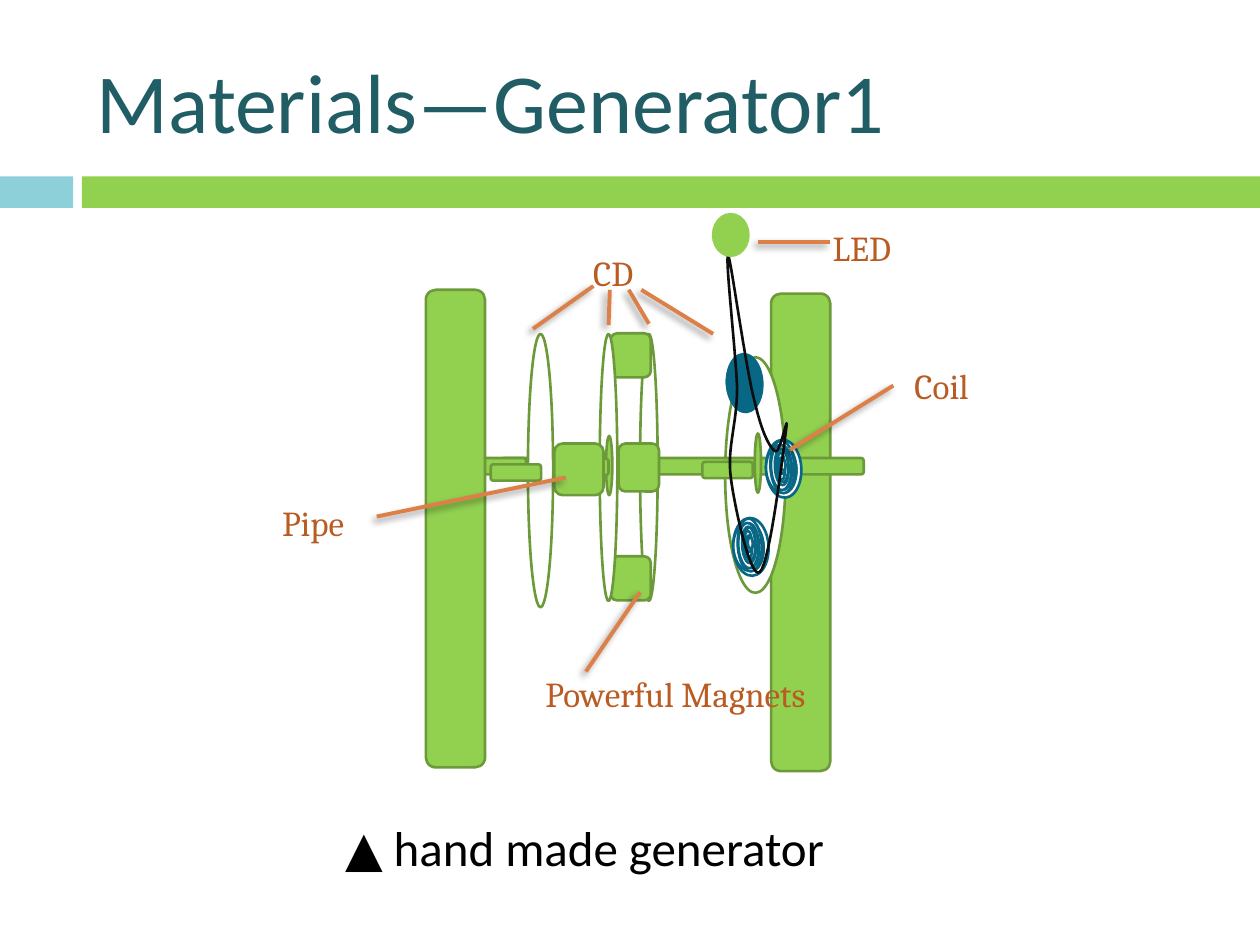
import dataclasses

import lxml.etree
import pptx
import pptx.dml.color
import pptx.enum.shapes
import pptx.enum.text
import pptx.oxml.ns
import pptx.util

Inches = pptx.util.Inches
Pt = pptx.util.Pt
Shapes = pptx.enum.shapes.MSO_SHAPE
Anchor = pptx.enum.text.MSO_ANCHOR


@dataclasses.dataclass(frozen=True)
class Theme:
    green: str = "92D050"
    dark_green: str = "6C9A3B"
    sky: str = "8DD0D9"
    teal: str = "215D65"
    coil: str = "076785"
    wire: str = "0D0D0D"
    pointer: str = "DD8047"
    label: str = "B95B22"
    black: str = "000000"
    white: str = "FFFFFF"
    body_font: str = "Calibri"
    label_font: str = "Cambria"
    title_size: int = 48
    caption_size: int = 28
    label_size: int = 20
    outline: float = 1.5
    pointer_width: float = 2.25


def rgb(value):
    return pptx.dml.color.RGBColor.from_string(value)


class SlideBuilder:
    def __init__(self, slide, theme):
        self.slide = slide
        self.theme = theme

    def shape(self, kind, box, fill, line=None, rotation=0):
        shape = self.slide.shapes.add_shape(kind, *map(Inches, box))
        shape.shadow.inherit = False
        shape.rotation = rotation
        shape.fill.solid()
        shape.fill.fore_color.rgb = rgb(fill)
        if line:
            shape.line.color.rgb = rgb(line)
            shape.line.width = Pt(self.theme.outline)
        else:
            shape.line.fill.background()

    def text(self, box, words, font, size, color, anchor=Anchor.TOP):
        frame = self.slide.shapes.add_textbox(*map(Inches, box)).text_frame
        frame.word_wrap = True
        frame.vertical_anchor = anchor
        paragraph = frame.paragraphs[0]
        paragraph.text = words
        paragraph.font.name = font
        paragraph.font.size = Pt(size)
        paragraph.font.color.rgb = rgb(color)

    def label(self, box, words):
        theme = self.theme
        self.text(box, words, theme.label_font, theme.label_size, theme.label)

    def pointer(self, start, end):
        connector = self.slide.shapes.add_connector(
            pptx.enum.shapes.MSO_CONNECTOR.STRAIGHT, *map(Inches, start + end))
        connector.line.color.rgb = rgb(self.theme.pointer)
        connector.line.width = Pt(self.theme.pointer_width)
        qn = pptx.oxml.ns.qn
        properties = connector.element.find(qn("p:spPr"))
        effects = lxml.etree.SubElement(properties, qn("a:effectLst"))
        shadow = lxml.etree.SubElement(
            effects, qn("a:outerShdw"), blurRad=str(Pt(4)), dist=str(Pt(3)),
            dir=str(135 * 60000), rotWithShape="0")
        color = lxml.etree.SubElement(shadow, qn("a:srgbClr"), val=self.theme.black)
        lxml.etree.SubElement(color, qn("a:alpha"), val="40000")

    def coil(self, left, top, fill):
        for across, down, width, height in COIL_RINGS:
            self.shape(Shapes.OVAL, (left + across, top + down, width, height),
                       fill, self.theme.coil, 267)

    def wire(self, start, curves, steps=16):
        points = []
        current = start
        for first, second, end in curves:
            for step in range(1, steps + 1):
                t = step / steps
                points.append(tuple(
                    (1 - t) ** 3 * a + 3 * (1 - t) ** 2 * t * b
                    + 3 * (1 - t) * t ** 2 * c + t ** 3 * d
                    for a, b, c, d in zip(current, first, second, end)))
            current = end
        builder = self.slide.shapes.build_freeform(
            Inches(start[0]), Inches(start[1]))
        builder.add_line_segments([(Inches(x), Inches(y)) for x, y in points])
        shape = builder.convert_to_shape()
        shape.shadow.inherit = False
        shape.fill.background()
        shape.line.color.rgb = rgb(self.theme.wire)
        shape.line.width = Pt(self.theme.outline)


COIL_RINGS = [
    (0, 0, 0.46, 0.28), (0.04, 0.04, 0.38, 0.2), (0.06, 0.05, 0.33, 0.16),
    (0.08, 0.09, 0.28, 0.11), (0.14, 0.1, 0.17, 0.1), (0.17, 0.11, 0.11, 0.07),
    (0.02, 0.02, 0.38, 0.24), (0.06, 0.05, 0.32, 0.17), (0.08, 0.06, 0.27, 0.14),
    (0.1, 0.09, 0.24, 0.09), (0.15, 0.09, 0.14, 0.08), (0.18, 0.09, 0.09, 0.06),
    (0.01, 0.03, 0.42, 0.19), (0.05, 0.06, 0.35, 0.14), (0.07, 0.07, 0.3, 0.11),
    (0.08, 0.09, 0.26, 0.07), (0.14, 0.1, 0.15, 0.06), (0.17, 0.11, 0.1, 0.05),
    (0.03, 0.05, 0.36, 0.16), (0.07, 0.07, 0.29, 0.11), (0.09, 0.07, 0.26, 0.09),
    (0.1, 0.09, 0.22, 0.06), (0.15, 0.09, 0.13, 0.05), (0.18, 0.09, 0.09, 0.04),
]

WIRE_CURVES = [
    ((6.05, 3.45), (6.11, 3.55), (6.15, 3.58)),
    ((6.19, 3.62), (6.26, 3.24), (6.24, 3.4)),
    ((6.22, 3.56), (6.11, 4.48), (6.03, 4.54)),
    ((5.96, 4.61), (5.83, 4.03), (5.8, 3.79)),
    ((5.77, 3.54), (5.85, 3.37), (5.85, 3.08)),
    ((5.84, 2.79), (5.75, 2.01), (5.78, 2.03)),
    ((5.8, 2.05), (5.92, 2.94), (5.99, 3.19)),
]


def main():
    presentation = pptx.Presentation()
    presentation.slide_width = Inches(10)
    presentation.slide_height = Inches(7.5)
    theme = Theme()
    slide = presentation.slides.add_slide(presentation.slide_layouts[6])
    builder = SlideBuilder(slide, theme)

    builder.shape(Shapes.RECTANGLE, (0, 1.4, 0.58, 0.25), theme.sky)
    builder.shape(Shapes.RECTANGLE, (0.65, 1.4, 9.35, 0.25), theme.green)
    builder.text((0.67, 0.25, 8.92, 1.08), "Materials—Generator1",
                 theme.body_font, theme.title_size, theme.teal, Anchor.MIDDLE)

    block = (Shapes.ROUNDED_RECTANGLE, theme.green)
    disc = (Shapes.OVAL, theme.white)
    hub = (Shapes.OVAL, theme.green)
    generator_parts = [
        (block, (6.12, 2.33, 0.47, 3.79), 0),
        (disc, (5.06, 3.53, 1.87, 0.48), 270),
        (disc, (4.09, 3.64, 2.12, 0.14), 270),
        (block, (5.35, 2.26, 0.13, 2.88), 270),
        (block, (4.83, 2.66, 0.35, 0.32), 270),
        (block, (4.83, 4.43, 0.35, 0.32), 270),
        (block, (4.88, 3.55, 0.38, 0.32), 270),
        (disc, (3.77, 3.64, 2.12, 0.14), 270),
        (hub, (4.6, 3.67, 0.47, 0.05), 270),
        (block, (3.91, 3.5, 0.13, 0.4), 270),
        (block, (4.58, 3.52, 0.13, 0.37), 270),
        (block, (5.71, 3.53, 0.13, 0.4), 270),
        (hub, (5.78, 3.65, 0.47, 0.05), 270),
        (block, (3.38, 2.3, 0.47, 3.79), 0),
        (block, (4.4, 3.52, 0.39, 0.41), 0),
        (disc, (4.19, 2.65, 0.2, 2.17), 0),
        (block, (4.03, 3.55, 0.13, 0.4), 270),
    ]
    for (kind, fill), box, rotation in generator_parts:
        builder.shape(kind, box, fill, theme.dark_green, rotation)

    builder.coil(5.68, 2.9, theme.coil)
    builder.coil(5.99, 3.58, theme.white)
    builder.coil(5.73, 4.2, theme.white)
    builder.wire((5.99, 3.19), WIRE_CURVES)
    builder.shape(Shapes.OVAL, (5.66, 1.7, 0.28, 0.33), theme.green, theme.green)

    for start, end in [
        ((4.71, 2.27), (4.23, 2.61)), ((4.84, 2.3), (4.83, 2.58)),
        ((4.99, 2.3), (5.15, 2.57)), ((5.09, 2.3), (5.66, 2.65)),
        ((4.49, 3.79), (2.99, 4.1)), ((5.08, 4.7), (4.65, 5.33)),
        ((6.59, 1.92), (6.02, 1.92)), ((7.09, 3.06), (6.27, 3.57)),
    ]:
        builder.pointer(start, end)

    for box, words in [
        ((4.61, 1.95, 0.67, 0.38), "CD"),
        ((4.23, 5.29, 2.87, 0.48), "Powerful Magnets"),
        ((7.16, 2.84, 0.67, 0.42), "Coil"),
        ((2.14, 3.93, 0.93, 0.42), "Pipe"),
        ((6.51, 1.75, 0.86, 0.42), "LED"),
    ]:
        builder.label(box, words)

    builder.text((2.64, 6.44, 4.72, 0.57), "▲ hand made generator",
                 theme.body_font, theme.caption_size, theme.black)
    presentation.save("out.pptx")


if __name__ == "__main__":
    main()
